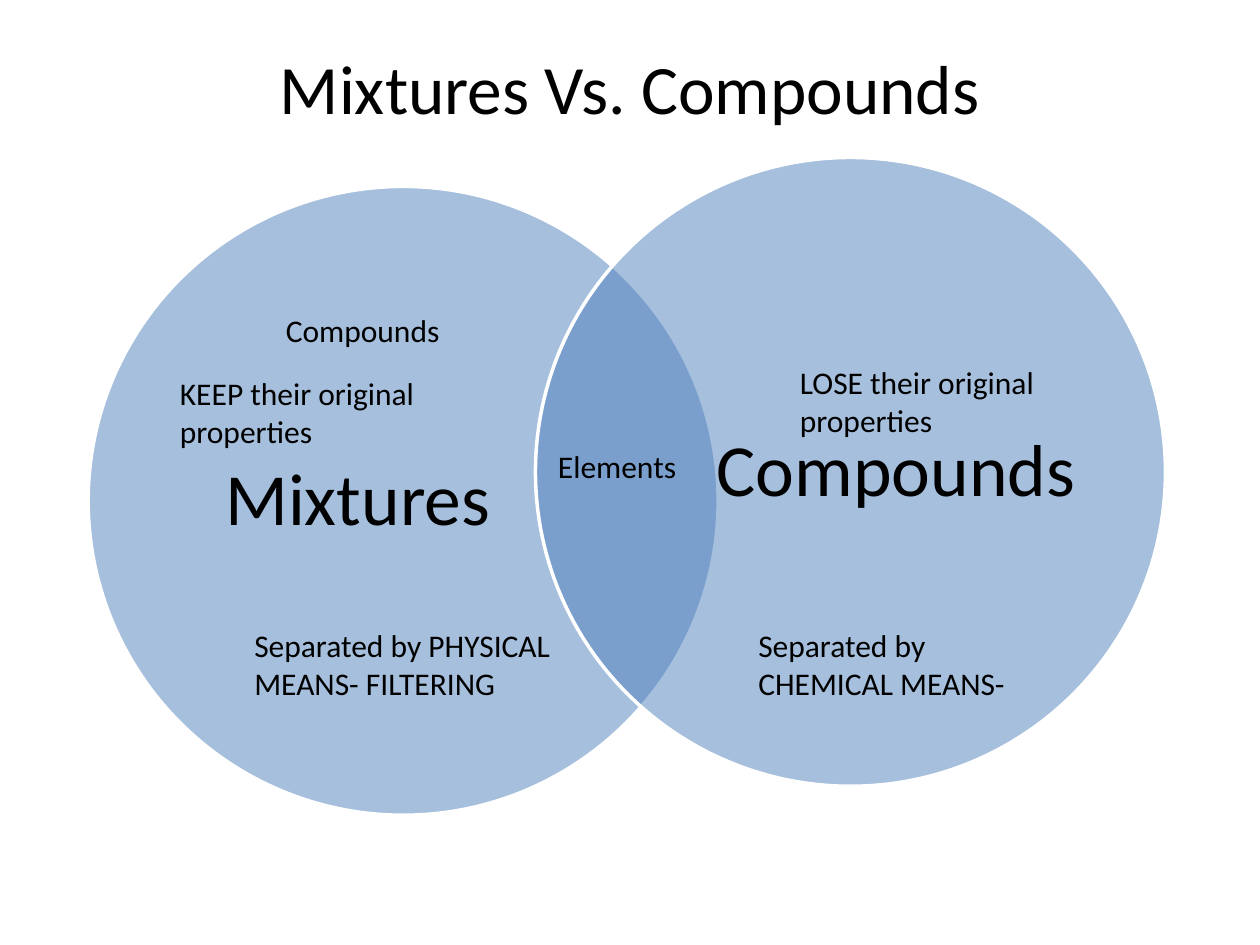
from dataclasses import dataclass

from lxml import etree
from pptx import Presentation
from pptx.dml.color import RGBColor
from pptx.enum.shapes import MSO_SHAPE
from pptx.enum.text import MSO_ANCHOR, PP_ALIGN
from pptx.oxml.ns import qn
from pptx.util import Inches, Pt

OVAL = MSO_SHAPE.OVAL
MIDDLE = MSO_ANCHOR.MIDDLE
CENTER = PP_ALIGN.CENTER

BLUE = RGBColor(0x4F, 0x81, 0xBD)
WHITE = RGBColor(0xFF, 0xFF, 0xFF)
BLACK = RGBColor(0x00, 0x00, 0x00)

FONT = "Calibri"
BLANK_LAYOUT = 6
CIRCLE_WIDTH, CIRCLE_HEIGHT = 5, 4.99
LABEL_WIDTH, LABEL_HEIGHT = 2.88, 3.82
LABEL_DROP = 0.59


@dataclass
class Circle:
    label: str
    left: float
    top: float
    label_left: float


@dataclass
class Note:
    text: str
    left: float
    top: float
    width: float
    height: float = 0.71
    wrap: bool = True


CIRCLES = [
    Circle("Mixtures", 0.7, 1.48, 1.4),
    Circle("Compounds", 4.25, 1.25, 5.67),
]

NOTES = [
    Note("Elements", 4.33, 3.5, 1.25, 0.4),
    Note("Compounds", 2.17, 2.42, 2.08, 0.4),
    Note("KEEP their original properties", 1.33, 2.92, 2.17),
    Note("Separated by PHYSICAL\nMEANS- FILTERING", 1.92, 4.92, 2.63, wrap=False),
    Note("LOSE their original properties", 6.25, 2.83, 2.25),
    Note("Separated by CHEMICAL MEANS-", 5.92, 4.92, 2.33),
]


def add_text(slide, note: Note, size: float, centered: bool = False):
    """Add a text box and return its text frame."""
    box = slide.shapes.add_textbox(
        Inches(note.left), Inches(note.top), Inches(note.width), Inches(note.height)
    )
    text_frame = box.text_frame
    text_frame.word_wrap = note.wrap
    text_frame.text = note.text
    if centered:
        text_frame.vertical_anchor = MIDDLE
    for paragraph in text_frame.paragraphs:
        if centered:
            paragraph.alignment = CENTER
        for run in paragraph.runs:
            run.font.name = FONT
            run.font.size = Pt(size)
            run.font.color.rgb = BLACK
    return text_frame


def add_circle(slide, circle: Circle) -> None:
    """Add a half-transparent circle with its large label."""
    shape = slide.shapes.add_shape(
        OVAL, Inches(circle.left), Inches(circle.top),
        Inches(CIRCLE_WIDTH), Inches(CIRCLE_HEIGHT),
    )
    shape.shadow.inherit = False
    shape.fill.solid()
    shape.fill.fore_color.rgb = BLUE
    color = shape.element.spPr.find(qn("a:solidFill")).find(qn("a:srgbClr"))
    etree.SubElement(color, qn("a:alpha"), val="50000")
    shape.line.color.rgb = WHITE
    shape.line.width = Pt(2)

    label = Note(circle.label, circle.label_left, circle.top + LABEL_DROP,
                 LABEL_WIDTH, LABEL_HEIGHT)
    text_frame = add_text(slide, label, 42, centered=True)
    text_frame.margin_left = text_frame.margin_right = 0
    text_frame.margin_top = text_frame.margin_bottom = 0
    text_frame.paragraphs[0].line_spacing = 0.9
    text_frame.paragraphs[0].space_after = Pt(14.7)


def main() -> None:
    presentation = Presentation()
    presentation.slide_width = Inches(10)
    presentation.slide_height = Inches(7.5)
    slide = presentation.slides.add_slide(presentation.slide_layouts[BLANK_LAYOUT])

    add_text(slide, Note("Mixtures Vs. Compounds", 0.5, 0.3, 9, 0.78), 39.6, centered=True)
    for circle in CIRCLES:
        add_circle(slide, circle)
    for note in NOTES:
        add_text(slide, note, 18)

    presentation.save("out.pptx")


if __name__ == "__main__":
    main()
